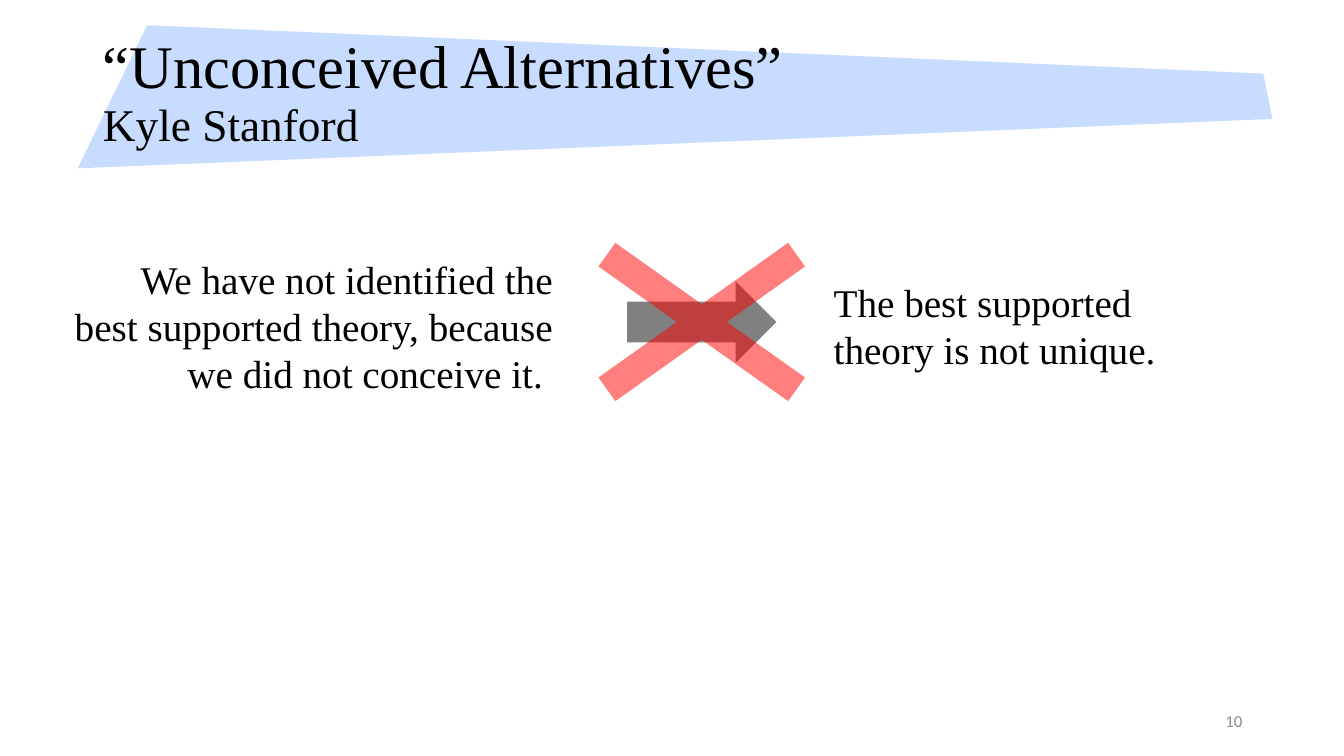
from pptx import Presentation
from pptx.dml.color import RGBColor
from pptx.enum.shapes import MSO_SHAPE
from pptx.enum.text import MSO_ANCHOR, MSO_AUTO_SIZE, PP_ALIGN
from pptx.oxml.ns import qn
from pptx.util import Pt
from lxml.etree import SubElement

PX = 9144  # EMU per px, 100 px to the inch
SERIF = "Times New Roman"
COLORS = {
    "banner": "C8DCFF",
    "text": "000000",
    "number": "8C8C8C",
    "arrow": "808080",
    "cross": "FF0000",
}


def px(*lengths):
    return [length * PX for length in lengths]


def color(name):
    return RGBColor.from_string(COLORS[name])


def paint(shape, fill, opacity=100):
    """Give a flat fill without outline or shadow; opacity is in percent."""
    shape.shadow.inherit = False
    shape.line.fill.background()
    shape.fill.solid()
    shape.fill.fore_color.rgb = color(fill)
    if opacity < 100:
        srgb = shape.element.spPr.find(f"{qn('a:solidFill')}/{qn('a:srgbClr')}")
        SubElement(srgb, qn("a:alpha"), val=str(opacity * 1000))


def set_font(font, size, name=SERIF, fill="text"):
    font.size = Pt(size)
    font.name = name
    font.color.rgb = color(fill)


def add_banner(page, corners):
    builder = page.shapes.build_freeform(*corners[0], scale=PX)
    builder.add_line_segments(corners[1:], close=True)
    banner = builder.convert_to_shape()
    paint(banner, "banner")
    return banner


def fill_title(title, heading, author):
    title.left, title.top, title.width, title.height = px(92, 40, 850, 106)
    frame = title.text_frame
    frame.auto_size = MSO_AUTO_SIZE.NONE
    frame.vertical_anchor = MSO_ANCHOR.MIDDLE
    para = frame.paragraphs[0]
    para.alignment = PP_ALIGN.LEFT
    para.line_spacing = 0.9
    span = para.add_run()
    span.text = heading
    set_font(span.font, 43.2)
    para.add_line_break()
    span = para.add_run()
    span.text = author
    set_font(span.font, 32.4)


def add_text(shapes, bounds, text, align=PP_ALIGN.LEFT):
    box = shapes.add_textbox(*px(*bounds))
    frame = box.text_frame
    frame.word_wrap = True
    frame.auto_size = MSO_AUTO_SIZE.SHAPE_TO_FIT_TEXT
    para = frame.paragraphs[0]
    para.text = text
    para.alignment = align
    set_font(para.font, 28)
    return box


def add_page_number(page, number):
    box = add_text(page.shapes, (1171, 695, 71, 40), number, PP_ALIGN.RIGHT)
    box.text_frame.auto_size = MSO_AUTO_SIZE.NONE
    box.text_frame.vertical_anchor = MSO_ANCHOR.MIDDLE
    set_font(box.text_frame.paragraphs[0].font, 12, "Calibri", "number")


def add_crossed_arrow(shapes):
    arrow = shapes.add_shape(MSO_SHAPE.RIGHT_ARROW, *px(622, 279, 148, 81))
    paint(arrow, "arrow")
    cross = shapes.add_shape(MSO_SHAPE.MATH_MULTIPLY, *px(515, 191, 362, 257))
    cross.adjustments[0] = 0.112
    paint(cross, "cross", opacity=50)


def main():
    deck = Presentation()
    deck.slide_width, deck.slide_height = px(1333, 750)
    page = deck.slides.add_slide(deck.slide_layouts[5])
    title = page.shapes.title

    banner = add_banner(page, [(146, 25), (1253, 73), (1262, 118), (77, 167)])
    title.element.addprevious(banner.element)  # behind the title
    fill_title(title, "“Unconceived Alternatives”", "Kyle Stanford")
    add_page_number(page, "10")

    add_text(
        page.shapes,
        (59, 248, 499, 151),
        "We have not identified the best supported theory, because we did not conceive it. ",
        PP_ALIGN.RIGHT,
    )
    conclusion = page.shapes.add_group_shape().shapes
    add_text(conclusion, (817, 271, 340, 104), "The best supported theory is not unique.")
    add_crossed_arrow(conclusion)

    deck.save("out.pptx")


if __name__ == "__main__":
    main()
